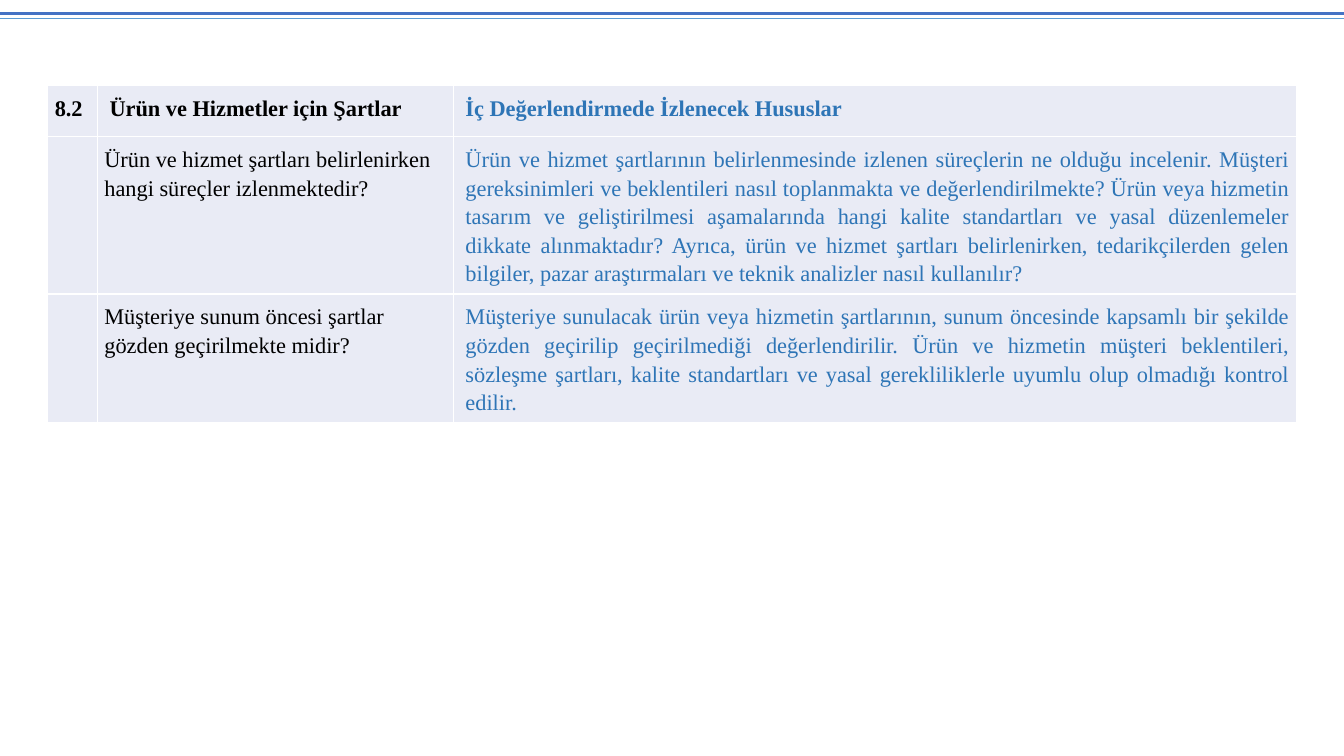
from lxml import etree
from pptx import Presentation
from pptx import util as u
from pptx.dml.color import RGBColor
from pptx.enum import shapes, text
from pptx.oxml import ns

HUES = {"sky": "5B9BD5", "blue": "4472C4", "pale": "E9EBF5",
        "white": "FFFFFF", "black": "000000", "ink": "2E75B6"}
WIDE, HIGH = 33.87, 19.05

ROWS = [
    ("8.2", "Ürün ve Hizmetler için Şartlar", "İç Değerlendirmede İzlenecek Hususlar"),
    ("", "Ürün ve hizmet şartları belirlenirken hangi süreçler izlenmektedir?",
     "Ürün ve hizmet şartlarının belirlenmesinde izlenen süreçlerin ne olduğu incelenir. "
     "Müşteri gereksinimleri ve beklentileri nasıl toplanmakta ve değerlendirilmekte? "
     "Ürün veya hizmetin tasarım ve geliştirilmesi aşamalarında hangi kalite standartları "
     "ve yasal düzenlemeler dikkate alınmaktadır? Ayrıca, ürün ve hizmet şartları "
     "belirlenirken, tedarikçilerden gelen bilgiler, pazar araştırmaları ve teknik "
     "analizler nasıl kullanılır?"),
    ("", "Müşteriye sunum öncesi şartlar gözden geçirilmekte midir?",
     "Müşteriye sunulacak ürün veya hizmetin şartlarının, sunum öncesinde kapsamlı bir "
     "şekilde gözden geçirilip geçirilmediği değerlendirilir. Ürün ve hizmetin müşteri "
     "beklentileri, sözleşme şartları, kalite standartları ve yasal gerekliliklerle "
     "uyumlu olup olmadığı kontrol edilir."),
]


def hue(name):
    return RGBColor.from_string(HUES[name])


def apply(item, style):
    for key, value in style.items():
        setattr(item, key, value)


class Page:
    font = {"name": "Times New Roman", "size": u.Pt(16)}
    inset = {"margin_" + side: u.Cm(0.18) for side in ("left", "right", "top", "bottom")}
    flags = {"first_row": False, "horz_banding": False}

    def __init__(self, deck):
        self.slide = deck.slides.add_slide(deck.slide_layouts[6])

    def rule(self, top, color, width):
        line = self.slide.shapes.add_connector(
            shapes.MSO_CONNECTOR.STRAIGHT, 0, u.Cm(top), u.Cm(WIDE), u.Cm(top))
        line.line.color.rgb = hue(color)
        line.line.width = u.Pt(width)
        etree.SubElement(line._element.spPr, ns.qn("a:effectLst"))

    def border(self, cell):
        props = cell._tc.get_or_add_tcPr()
        for spot, side in enumerate("LRTB"):
            edge = etree.Element(ns.qn("a:ln" + side), w=str(u.Pt(1)))
            fill = etree.SubElement(edge, ns.qn("a:solidFill"))
            etree.SubElement(fill, ns.qn("a:srgbClr"), val=HUES["white"])
            props.insert(spot, edge)

    def cell(self, cell, words, style, indent, align):
        apply(cell, self.inset)
        cell.fill.solid()
        cell.fill.fore_color.rgb = hue("pale")
        self.border(cell)
        para = cell.text_frame.paragraphs[0]
        apply(para, {"line_spacing": 1.15, "alignment": align})
        if indent:
            props = para._p.get_or_add_pPr()
            props.set("marL", str(u.Cm(0.13)))
            props.set("indent", "0")
        if words:
            para.text = words
        color = style.pop("color")
        apply(para.font, {**self.font, **style})
        para.font.color.rgb = hue(color)

    def table(self, left, top, widths, heights, rows):
        frame = self.slide.shapes.add_table(
            len(rows), len(widths), u.Cm(left), u.Cm(top),
            u.Cm(sum(widths)), u.Cm(sum(heights)))
        grid = frame.table
        apply(grid, self.flags)
        for col, width in zip(grid.columns, widths):
            col.width = u.Cm(width)
        for row, height in zip(grid.rows, heights):
            row.height = u.Cm(height)
        for r, line in enumerate(rows):
            for c, words in enumerate(line):
                last = c == 2
                style = {"bold": r == 0, "color": "ink" if last else "black"}
                align = text.PP_ALIGN.JUSTIFY if last else text.PP_ALIGN.LEFT
                indent = last or (r == 0 and c == 1)
                self.cell(grid.cell(r, c), words, style, indent, align)


def main():
    deck = Presentation()
    apply(deck, {"slide_width": u.Cm(WIDE), "slide_height": u.Cm(HIGH)})
    page = Page(deck)
    page.rule(0.46, "sky", 1)
    page.rule(0.33, "blue", 2.25)
    page.table(1.2, 2.16, (1.25, 8.97, 21.26), (1.28, 3.95, 3.23), ROWS)
    deck.save("out.pptx")


if __name__ == "__main__":
    main()
